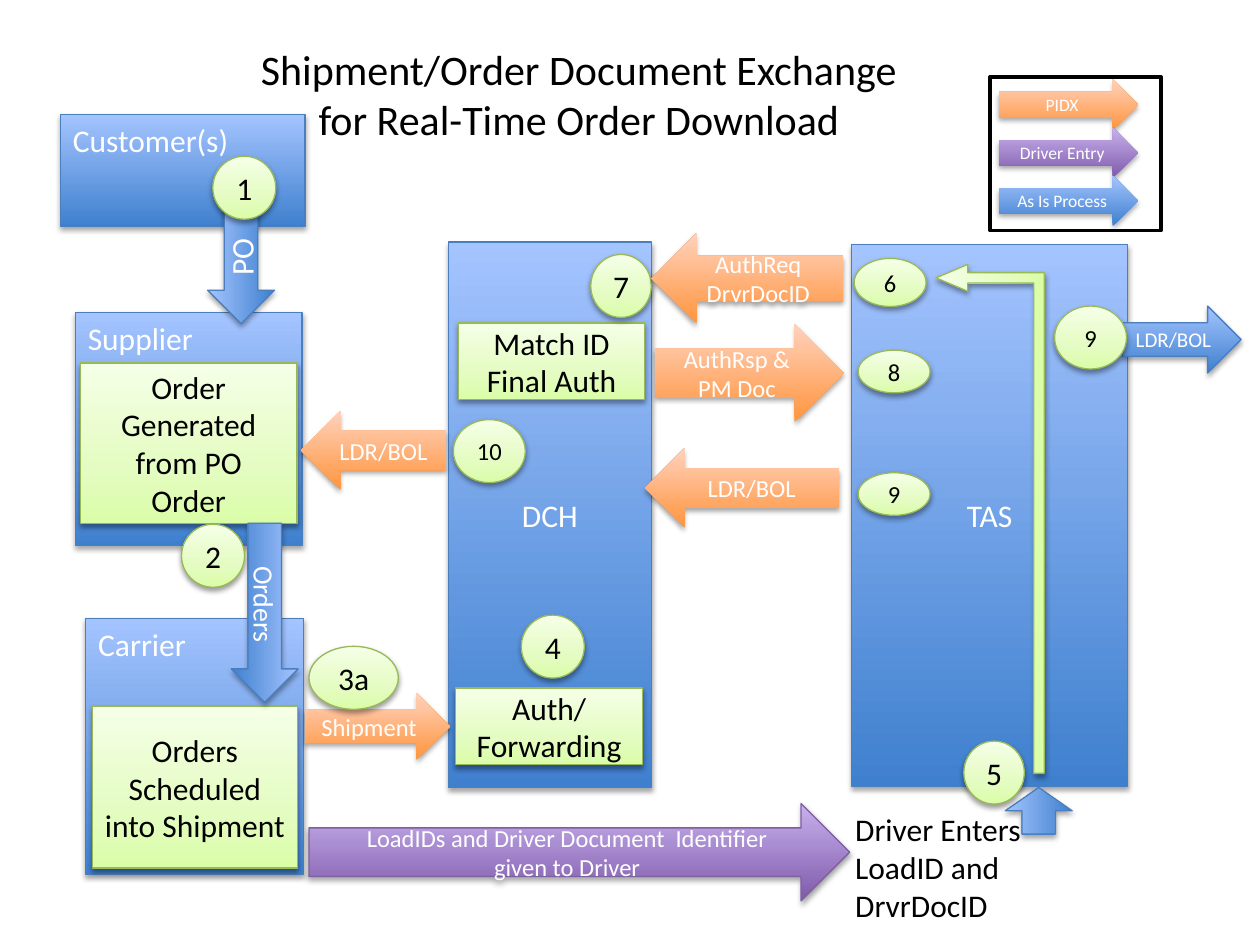
from lxml.etree import SubElement
from pptx import Presentation
from pptx.dml.color import RGBColor
from pptx.enum.shapes import MSO_SHAPE
from pptx.enum.text import MSO_ANCHOR, PP_ALIGN
from pptx.oxml.ns import qn
from pptx.util import Cm, Pt

FONT = "Calibri"
COLORS = {
    "white": "FFFFFF", "black": "000000",
    "blue dark": "3F80CE", "blue light": "A4C4FF", "blue line": "4B7EBC",
    "green dark": "DAFDA7", "green mid": "E4FCC2", "green light": "F5FFE7",
    "green line": "98B955",
    "orange dark": "FF953E", "orange light": "FFD2BD",
    "purple dark": "7F5BAB", "purple light": "C8B0ED", "purple line": "7D60A0",
}
# Each theme: gradient stops (percent, color), line, text color, shadow opacity
THEMES = {
    "blue": ([(0, "blue dark"), (100, "blue light")], "blue line", "white", 35),
    "green": ([(0, "green dark"), (35, "green mid"), (100, "green light")],
              "green line", "black", 38),
    "orange": ([(0, "orange dark"), (100, "orange light")], None, "white", 35),
    "purple": ([(0, "purple dark"), (100, "purple light")], "purple line", "white", 35),
}
RIGHT, LEFT = MSO_SHAPE.RIGHT_ARROW, MSO_SHAPE.LEFT_ARROW


def rgb(name):
    return RGBColor.from_string(COLORS[name])


def place(box, part):
    """Turn a part's left, top, width, height inside a box into slide lengths."""
    return [Cm(value) for value in (box[0] + part[0], box[1] + part[1], part[2], part[3])]


def write_text(shape, text, size, color, align=PP_ALIGN.CENTER, anchor=MSO_ANCHOR.MIDDLE):
    frame = shape.text_frame
    frame.text = text
    frame.word_wrap = True
    frame.vertical_anchor = anchor
    for paragraph in frame.paragraphs:
        paragraph.alignment = align
        for run in paragraph.runs:
            run.font.name = FONT
            run.font.size = Pt(size)
            run.font.color.rgb = rgb(color)


def add_color(parent, color, opacity=None):
    element = SubElement(parent, qn("a:srgbClr"), val=COLORS[color])
    if opacity:
        SubElement(element, qn("a:alpha"), val=str(opacity * 1000))


def apply_theme(shape, theme, outlined):
    stops, line, _, opacity = THEMES[theme]
    shape.fill.gradient()
    shape.fill.gradient_angle = 90
    properties = shape._element.spPr
    stop_list = properties.find(qn("a:gradFill")).find(qn("a:gsLst"))
    stop_list.clear()
    for percent, color in stops:
        add_color(SubElement(stop_list, qn("a:gs"), pos=str(percent * 1000)), color)
    if line and outlined:
        shape.line.color.rgb = rgb(line)
        shape.line.width = Pt(0.75)
    else:
        shape.line.fill.background()
    shape.shadow.inherit = False
    shadow = SubElement(properties.find(qn("a:effectLst")), qn("a:outerShdw"),
                        blurRad=str(Pt(3.1)), dist=str(Pt(1.8)), dir="5400000",
                        rotWithShape="0")
    add_color(shadow, "black", opacity)


def add_block(slide, kind, box, part, theme, text="", size=18, rotation=0, outlined=True):
    shape = slide.shapes.add_shape(kind, *place(box, part))
    apply_theme(shape, theme, outlined)
    shape.rotation = rotation
    if text:
        write_text(shape, text, size, THEMES[theme][2])
    return shape


def add_panel(slide, box, title, centered=False):
    panel = add_block(slide, MSO_SHAPE.RECTANGLE, box, (0, 0, *box[2:]), "blue")
    if centered:
        write_text(panel, title, 18, "white")
    else:
        write_text(panel, title, 18, "white", PP_ALIGN.LEFT, MSO_ANCHOR.TOP)


def add_card(slide, box, part, text):
    add_block(slide, MSO_SHAPE.RECTANGLE, box, part, "green", text)


def add_badge(slide, box, left, top, label, width=1.27, height=1.27, size=18):
    add_block(slide, MSO_SHAPE.FLOWCHART_CONNECTOR, box, (left, top, width, height),
              "green", label, size)


def add_label(slide, box, part, text, size, **options):
    text_box = slide.shapes.add_textbox(*place(box, part))
    write_text(text_box, text, size, "black", **options)
    return text_box


def draw_terminal(slide, box):
    """The TAS column, with the driver's entry below and the result at its right."""
    add_panel(slide, box, "TAS", centered=True)
    add_badge(slide, box, 2.26, 10.01, "5", width=1.22)
    add_block(slide, RIGHT, box, (3.3, 10.74, 0.94, 1.35), "blue", rotation=270)
    driver = add_label(slide, box, (-0.18, 11.28, 4.04, 2.57),
                       "Driver Enters\nLoadID and\nDrvrDocID", 18,
                       align=PP_ALIGN.LEFT, anchor=MSO_ANCHOR.TOP)
    driver.text_frame.word_wrap = False
    for label, left, top, height in (("6", 0.05, 0.28, 0.97), ("8", 0.13, 2.13, 0.86),
                                     ("9", 0.13, 4.6, 0.86)):
        add_badge(slide, box, left, top, label, 1.45, height, 14)
    path_arrow = add_block(slide, MSO_SHAPE.BENT_UP_ARROW, box,
                           (-2.34, 4.44, 10.26, 2.18), "green", rotation=270)
    for index, value in enumerate((0.096, 0.124, 0.294)):
        path_arrow.adjustments[index] = value
    add_block(slide, RIGHT, box, (5.46, 1.24, 2.39, 1.35), "blue", "LDR/BOL", 12)
    add_badge(slide, box, 4.09, 1.24, "9", 1.45, size=14)


def draw_hub(slide, box):
    """The DCH column."""
    add_panel(slide, box, "DCH", centered=True)
    add_card(slide, box, (0.2, 1.63, 3.76, 1.55), "Match ID\nFinal Auth")
    add_card(slide, box, (0.15, 8.99, 3.76, 1.55), "Auth/ Forwarding")
    add_badge(slide, box, 2.87, 0.25, "7", width=1.22)
    add_badge(slide, box, 0.1, 3.58, "10", 1.45, size=14)
    add_badge(slide, box, 1.47, 7.52, "4")


def draw_exchange(slide, box):
    """The messages between the DCH and TAS columns."""
    for kind, part, text in (
        (LEFT, (0.13, 0, 3.86, 1.83), "AuthReq\nDrvrDocID"),
        (RIGHT, (0.2, 1.83, 3.81, 1.98), "AuthRsp &\nPM Doc"),
        (LEFT, (0, 4.34, 3.91, 1.6), "LDR/BOL"),
    ):
        add_block(slide, kind, box, part, "orange", text, 14)


def draw_supplier(slide, box):
    add_panel(slide, box, "Supplier")
    add_card(slide, box, (0.1, 1.02, 4.37, 3.23), "Order Generated from PO\nOrder")
    add_block(slide, LEFT, box, (4.55, 1.98, 2.92, 1.6), "orange", "LDR/BOL", 14)


def draw_customer(slide, box):
    add_panel(slide, box, "Customer(s)")
    add_block(slide, LEFT, box, (2.46, 2.36, 2.36, 1.35), "blue", "PO", rotation=270)
    add_badge(slide, box, 3.07, 0.84, "1")


def draw_carrier(slide, box):
    add_panel(slide, box, "Carrier")
    add_card(slide, box, (0.13, 1.78, 4.14, 3.25), "Orders Scheduled into Shipment")
    add_block(slide, RIGHT, box, (1.8, -0.79, 3.61, 1.35), "blue", "Orders", 16, 90)
    add_badge(slide, box, 1.93, -1.9, "2")
    add_block(slide, RIGHT, box, (4.42, 1.5, 2.92, 1.35), "orange", "Shipment", 14)
    add_badge(slide, box, 4.5, 0.56, "3a", width=1.8)
    add_block(slide, RIGHT, box, (4.5, 3.73, 10.9, 1.96), "purple",
              "LoadIDs and Driver Document  Identifier\ngiven to Driver", 14)


def draw_legend(slide, box):
    frame = slide.shapes.add_shape(MSO_SHAPE.RECTANGLE, *place(box, (0, 0, *box[2:])))
    frame.shadow.inherit = False
    frame.fill.solid()
    frame.fill.fore_color.rgb = rgb("white")
    frame.line.color.rgb = rgb("black")
    frame.line.width = Pt(2)
    entries = (("orange", "PIDX"), ("purple", "Driver Entry"), ("blue", "As Is Process"))
    for row, (theme, text) in enumerate(entries):
        add_block(slide, RIGHT, box, (0.18, 0.05 + row * 0.97, 2.8, 1.02), theme, text, 10,
                  outlined=False)


def main():
    presentation = Presentation()
    presentation.slide_width, presentation.slide_height = Cm(25.4), Cm(19.05)
    slide = presentation.slides.add_slide(presentation.slide_layouts[6])
    draw_terminal(slide, (17.17, 4.93, 5.56, 10.92))
    draw_hub(slide, (9.04, 4.88, 4.09, 11))
    draw_exchange(slide, (13, 4.7, 4.01, 5.94))
    draw_supplier(slide, (1.52, 6.3, 4.57, 4.7))
    draw_customer(slide, (1.22, 2.31, 4.93, 2.26))
    draw_carrier(slide, (1.73, 12.47, 4.39, 5.16))
    add_label(slide, (4.47, 0.3), (0, 0, 14.4, 3.18),
              "Shipment/Order Document Exchange for Real-Time Order Download", 24)
    draw_legend(slide, (19.96, 1.55, 3.45, 3.1))
    presentation.save("out.pptx")


if __name__ == "__main__":
    main()
